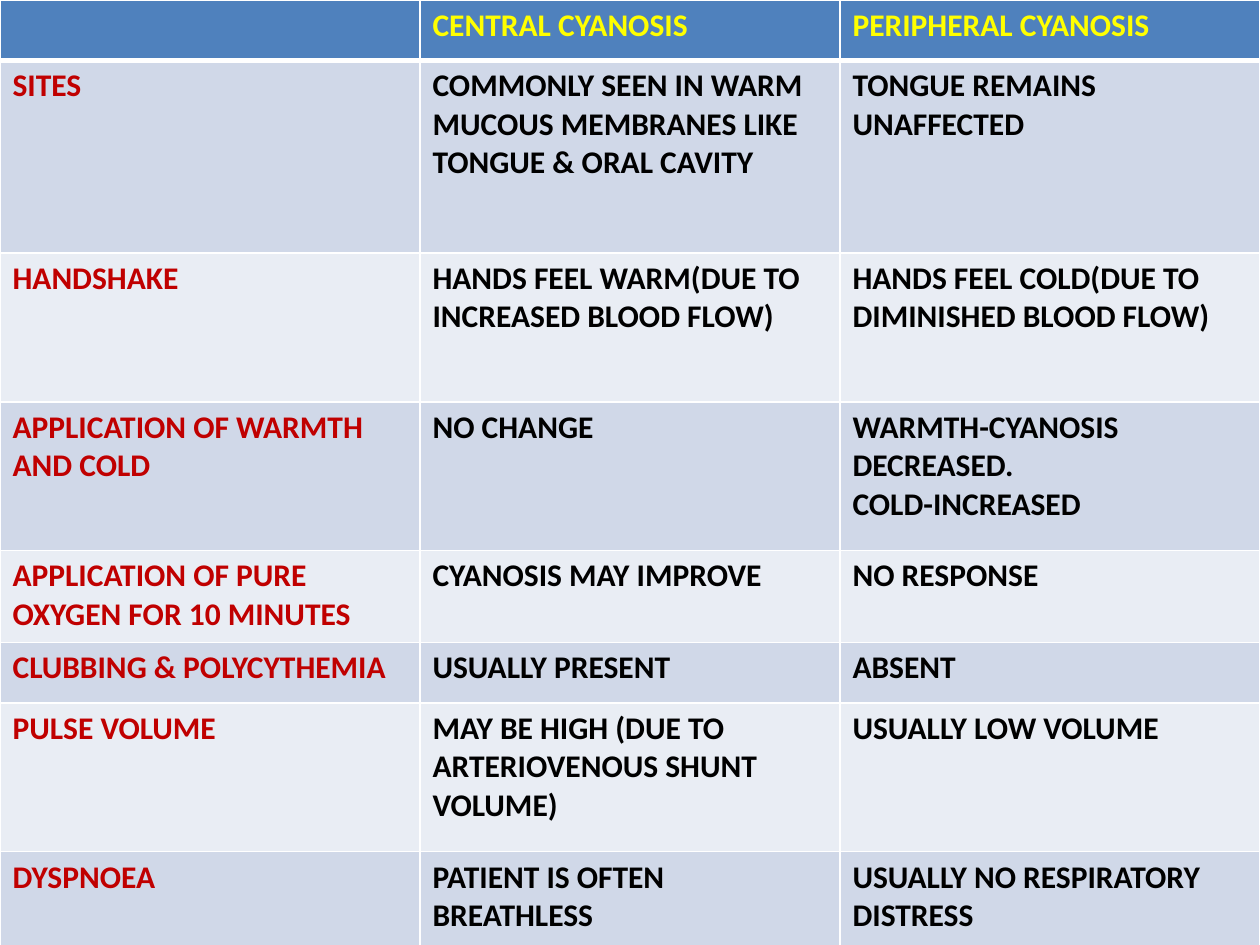
from pptx import Presentation
from pptx.dml.color import RGBColor
from pptx.oxml import parse_xml
from pptx.oxml.ns import nsdecls
from pptx.util import Inches, Pt

HEAD, DARK, LIGHT = "4F81BD", "D0D8E8", "E9EDF4"
HEIGHTS = [0.48, 1.53, 1.18, 1.18, 0.73, 0.48, 1.18, 0.82]
ROWS = [
    ("", "CENTRAL CYANOSIS", "PERIPHERAL CYANOSIS"),
    ("SITES",
     "COMMONLY SEEN IN WARM MUCOUS MEMBRANES LIKE TONGUE & ORAL CAVITY",
     "TONGUE REMAINS UNAFFECTED"),
    ("HANDSHAKE",
     "HANDS FEEL WARM(DUE TO INCREASED BLOOD FLOW)",
     "HANDS FEEL COLD(DUE TO DIMINISHED BLOOD FLOW)"),
    ("APPLICATION OF WARMTH AND COLD",
     "NO CHANGE",
     "WARMTH-CYANOSIS DECREASED.\nCOLD-INCREASED"),
    ("APPLICATION OF PURE OXYGEN FOR 10 MINUTES",
     "CYANOSIS MAY IMPROVE",
     "NO RESPONSE"),
    ("CLUBBING & POLYCYTHEMIA", "USUALLY PRESENT", "ABSENT"),
    ("PULSE VOLUME",
     "MAY BE HIGH (DUE TO ARTERIOVENOUS SHUNT VOLUME)",
     "USUALLY LOW VOLUME"),
    ("DYSPNOEA",
     "PATIENT IS OFTEN BREATHLESS",
     "USUALLY NO RESPIRATORY DISTRESS"),
]


def paint(fill, color):
    fill.solid()
    fill.fore_color.rgb = RGBColor.from_string(color)


def edge(cell, row):
    """Draw white cell borders, thicker between the header and the body."""
    widths = {"L": 1, "R": 1, "T": 3 if row == 1 else 1, "B": 3 if row == 0 else 1}
    props = cell._tc.get_or_add_tcPr()
    for side, width in widths.items():
        props.append(parse_xml(
            f'<a:ln{side} {nsdecls("a")} w="{Pt(width)}"><a:solidFill>'
            f'<a:srgbClr val="FFFFFF"/></a:solidFill></a:ln{side}>'))


def write(cell, text, color):
    cell.text_frame.text = text
    for para in cell.text_frame.paragraphs:
        for run in para.runs:
            font = run.font
            font.name, font.size, font.bold = "Calibri", Pt(18), True
            font.color.rgb = RGBColor.from_string(color)


def add_grid(slide, left, top, width):
    count = len(ROWS[0])
    table = slide.shapes.add_table(
        len(ROWS), count, left, top, width, Inches(sum(HEIGHTS))).table
    for col in table.columns:
        col.width = int(width / count)
    for row, (texts, height) in enumerate(zip(ROWS, HEIGHTS)):
        table.rows[row].height = Inches(height)
        shade = HEAD if row == 0 else DARK if row % 2 else LIGHT
        for col, text in enumerate(texts):
            cell = table.cell(row, col)
            edge(cell, row)
            paint(cell.fill, shade)
            ink = "FFFF00" if row == 0 else "C00000" if col == 0 else "000000"
            write(cell, text, ink)


def main():
    deck = Presentation()
    deck.slide_width, deck.slide_height = Inches(10), Inches(7.5)
    slide = deck.slides.add_slide(deck.slide_layouts[6])
    paint(slide.background.fill, "000000")
    add_grid(slide, Inches(0), Inches(0), deck.slide_width)
    deck.save("out.pptx")


if __name__ == "__main__":
    main()
